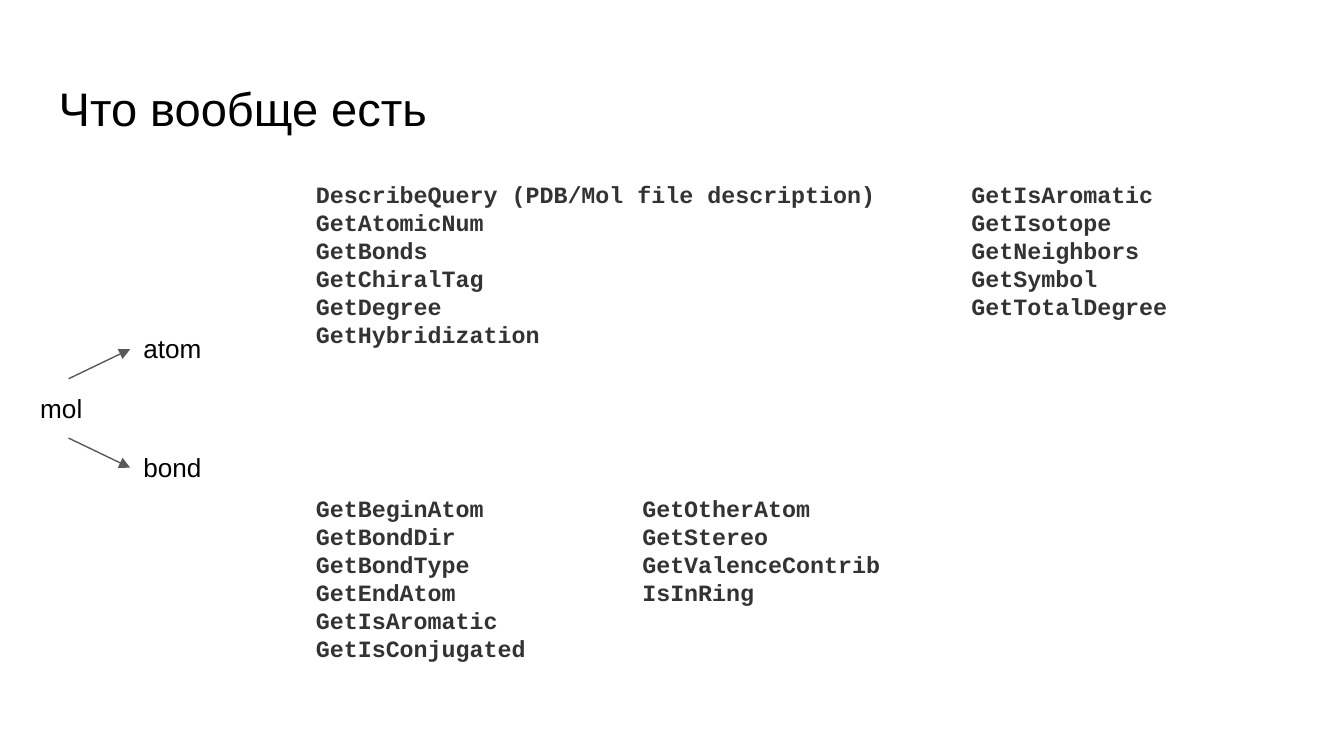
from dataclasses import dataclass

from lxml import etree
from pptx import Presentation
from pptx.dml.color import RGBColor
from pptx.enum.shapes import MSO_CONNECTOR
from pptx.enum.text import MSO_ANCHOR
from pptx.oxml.ns import qn
from pptx.shapes.autoshape import Shape
from pptx.slide import Slide
from pptx.util import Cm, Pt

STRAIGHT = MSO_CONNECTOR.STRAIGHT
TOP_ANCHOR = MSO_ANCHOR.TOP
MIDDLE_ANCHOR = MSO_ANCHOR.MIDDLE
TOP_SIDE, LEFT_SIDE, BOTTOM_SIDE = 0, 1, 2

INSET = 0.25
NODE_HEIGHT = 1.12
MOL_TOP = 7.16
LINE_HEIGHT = 0.53
ATOM_TOP, BOND_TOP = 3.15, 9.09
LIST_LEFT = 5.72


@dataclass(frozen=True)
class TextStyle:
    font: str
    size: float
    color: str
    bold: bool = False
    line_points: float | None = None


@dataclass(frozen=True)
class Node:
    label: str
    left: float
    top: float
    width: float


@dataclass(frozen=True)
class MethodList:
    left: float
    top: float
    width: float
    names: tuple[str, ...]


TITLE_STYLE = TextStyle("Arial", 25.2, "000000")
NODE_STYLE = TextStyle("Arial", 14, "000000")
METHOD_STYLE = TextStyle("Courier New", 12.5, "333333", True, 15)

MOL = Node("mol", 0.51, MOL_TOP, 1.57)
ATOM = Node("atom", 2.46, MOL_TOP - NODE_HEIGHT, 1.91)
BOND = Node("bond", 2.46, MOL_TOP + NODE_HEIGHT, 1.91)

METHOD_LISTS = (
    MethodList(LIST_LEFT, ATOM_TOP, 11.35, (
        "DescribeQuery (PDB/Mol file description)", "GetAtomicNum", "GetBonds",
        "GetChiralTag", "GetDegree", "GetHybridization")),
    MethodList(18.11, ATOM_TOP, 5.31, (
        "GetIsAromatic", "GetIsotope", "GetNeighbors", "GetSymbol",
        "GetTotalDegree")),
    MethodList(LIST_LEFT, BOND_TOP, 5.49, (
        "GetBeginAtom", "GetBondDir", "GetBondType", "GetEndAtom",
        "GetIsAromatic", "GetIsConjugated")),
    MethodList(11.89, BOND_TOP, 5.49, (
        "GetOtherAtom", "GetStereo", "GetValenceContrib", "IsInRing")),
)


def to_color(value: str) -> RGBColor:
    return RGBColor.from_string(value)


def add_text(page: Slide, left: float, top: float, width: float, height: float,
             lines: tuple[str, ...], style: TextStyle,
             anchor: MSO_ANCHOR = TOP_ANCHOR) -> Shape:
    box = page.shapes.add_textbox(Cm(left), Cm(top), Cm(width), Cm(height))
    frame = box.text_frame
    frame.word_wrap = True
    frame.vertical_anchor = anchor
    frame.margin_left = frame.margin_right = Cm(INSET)
    frame.margin_top = frame.margin_bottom = Cm(INSET)
    for index, line in enumerate(lines):
        para = frame.add_paragraph() if index else frame.paragraphs[0]
        if style.line_points:
            para.line_spacing = Pt(style.line_points)
        span = para.add_run()
        span.text = line
        span.font.name = style.font
        span.font.size = Pt(style.size)
        span.font.bold = style.bold
        span.font.color.rgb = to_color(style.color)
    return box


def add_node(page: Slide, node: Node) -> Shape:
    return add_text(page, node.left, node.top, node.width, NODE_HEIGHT,
                    (node.label,), NODE_STYLE)


def add_method_list(page: Slide, methods: MethodList) -> None:
    height = len(methods.names) * LINE_HEIGHT + 2 * INSET
    add_text(page, methods.left, methods.top, methods.width, height,
             methods.names, METHOD_STYLE)


def add_arrow(page: Slide, start: Shape, start_side: int, end: Shape) -> None:
    arrow = page.shapes.add_connector(STRAIGHT, 0, 0, 0, 0)
    arrow.begin_connect(start, start_side)
    arrow.end_connect(end, LEFT_SIDE)
    arrow.line.color.rgb = to_color("595959")
    arrow.line.width = Pt(0.75)
    properties = arrow.line._get_or_add_ln()
    etree.SubElement(properties, qn("a:tailEnd"), type="triangle", w="med", len="med")
    etree.SubElement(properties.getparent(), qn("a:effectLst"))


def main() -> None:
    deck = Presentation()
    deck.slide_width, deck.slide_height = Cm(25.4), Cm(14.29)
    page = deck.slides.add_slide(deck.slide_layouts[6])
    add_text(page, 0.86, 1.24, 23.67, 1.6, ("Что вообще есть",),
             TITLE_STYLE, MIDDLE_ANCHOR)
    mol, atom, bond = (add_node(page, node) for node in (MOL, ATOM, BOND))
    add_arrow(page, mol, TOP_SIDE, atom)
    add_arrow(page, mol, BOTTOM_SIDE, bond)
    for methods in METHOD_LISTS:
        add_method_list(page, methods)
    deck.save("out.pptx")


if __name__ == "__main__":
    main()
